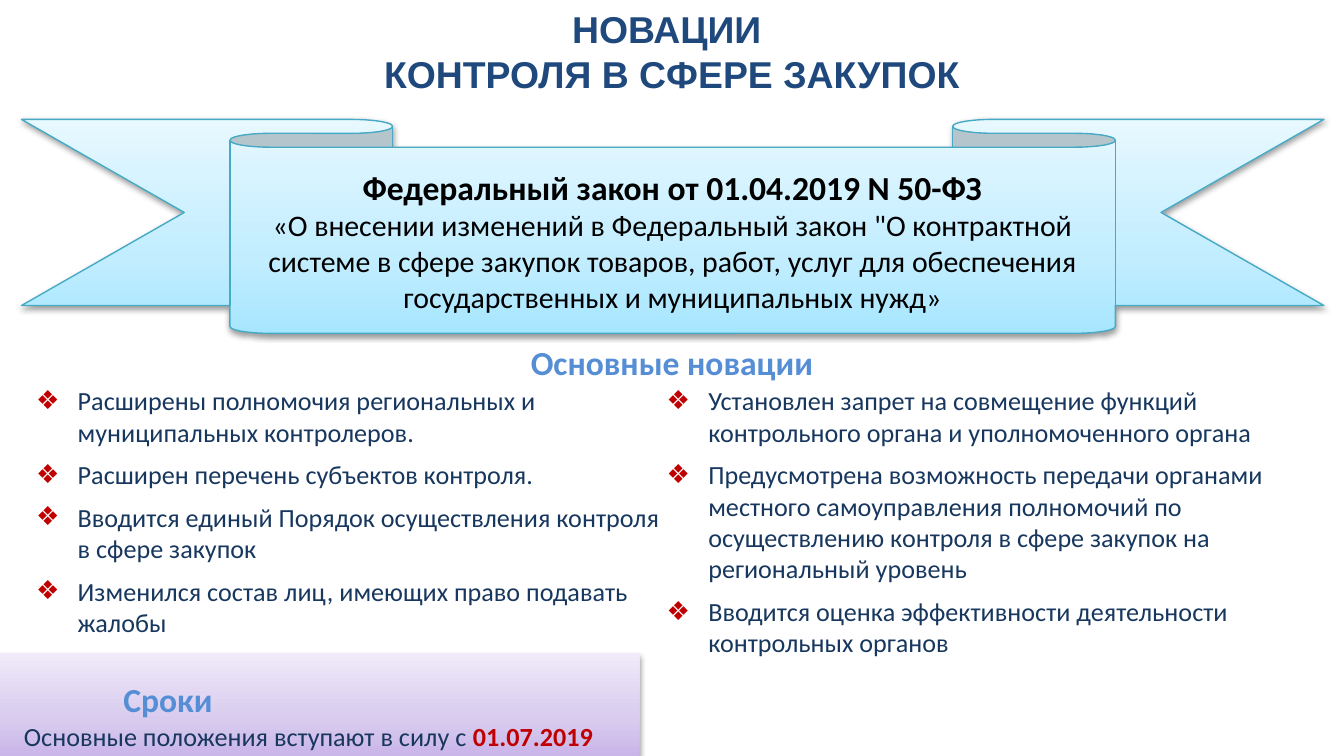
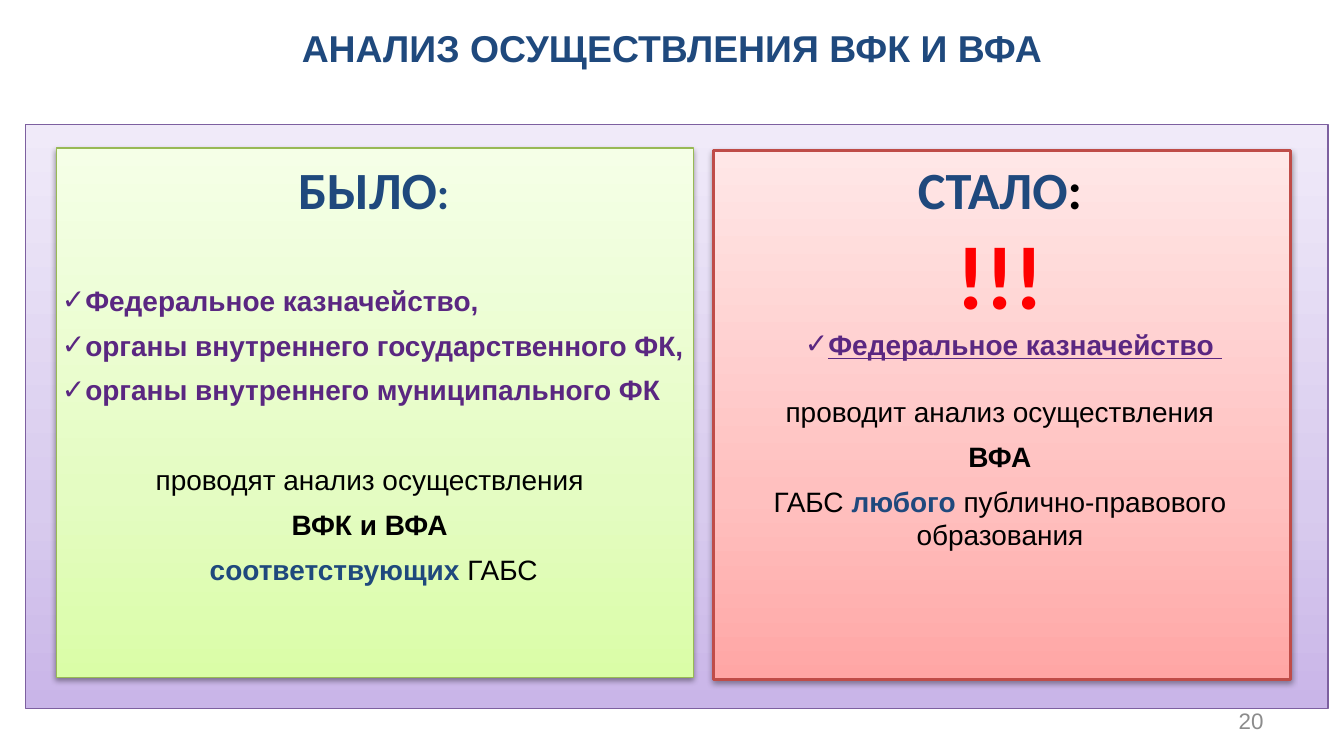
import lxml.etree
import pptx
import pptx.dml.color
import pptx.enum.shapes
import pptx.enum.text
import pptx.oxml
import pptx.oxml.ns
import pptx.util

RGBColor = pptx.dml.color.RGBColor
SHAPES = pptx.enum.shapes.MSO_SHAPE
LEFT = pptx.enum.text.PP_ALIGN.LEFT
CENTER = pptx.enum.text.PP_ALIGN.CENTER
RIGHT = pptx.enum.text.PP_ALIGN.RIGHT
MIDDLE = pptx.enum.text.MSO_ANCHOR.MIDDLE

NAVY = RGBColor(0x1F, 0x49, 0x7D)
DARK_NAVY = RGBColor(0x17, 0x37, 0x5E)
BLUE = RGBColor(0x55, 0x8E, 0xD5)
PURPLE = RGBColor(0x5A, 0x27, 0x81)
DARK_RED = RGBColor(0xC0, 0x00, 0x00)
RED = RGBColor(0xFF, 0x00, 0x00)
BLACK = RGBColor(0x00, 0x00, 0x00)
GRAY = RGBColor(0x8C, 0x8C, 0x8C)
TEAL_LINE = RGBColor(0x46, 0xAA, 0xC5)
PURPLE_LINE = RGBColor(0x7D, 0x60, 0xA0)
GREEN_LINE = RGBColor(0x98, 0xB9, 0x55)
RED_LINE = RGBColor(0xBF, 0x4C, 0x48)

# Gradients run from the bottom edge to the top, with stops at 0, 35 and 100 %
LILAC = (RGBColor(0xC9, 0xB5, 0xE8), RGBColor(0xD8, 0xCB, 0xEE), RGBColor(0xF0, 0xEA, 0xF9))
SKY = (RGBColor(0xA7, 0xE6, 0xFF), RGBColor(0xC1, 0xED, 0xFF), RGBColor(0xE7, 0xF8, 0xFF))
LIME = (RGBColor(0xDA, 0xFD, 0xA7), RGBColor(0xE4, 0xFC, 0xC2), RGBColor(0xF5, 0xFF, 0xE7))
ROSE = (RGBColor(0xFF, 0xA6, 0xA5), RGBColor(0xFF, 0xC0, 0xBF), RGBColor(0xFF, 0xE7, 0xE7))

# Text styles
TITLE = dict(size=20, font="Arial", color=NAVY, bold=True, align=CENTER)
HEADING = dict(size=18, font="Calibri", color=BLUE, bold=True)
BODY = dict(size=14, font="Calibri", color=DARK_NAVY)
CARD_HEADING = dict(size=28, font="Calibri", color=NAVY, bold=True, align=CENTER)
CARD_BODY = dict(size=15, font="Arial", color=BLACK, align=CENTER)
CHECKED = dict(size=15, font="Arial", color=PURPLE, bold=True, bullet="✓")

presentation = pptx.Presentation()
presentation.slide_width = pptx.util.Inches(10)
presentation.slide_height = pptx.util.Inches(5.625)
COLUMN = presentation.slide_width / 100
ROW = presentation.slide_height / 100


def add_frame(slide, left, top, width, height, preset=None, gradient=None,
              line=None, line_width=0.75, shadow=True):
    """Add a shape, or a text box without a preset, on a grid of 100 columns and rows."""
    place = [int(left * COLUMN), int(top * ROW), int(width * COLUMN), int(height * ROW)]
    if preset is None:
        shape = slide.shapes.add_textbox(*place)
        shape.text_frame.word_wrap = True
        return shape
    shape = slide.shapes.add_shape(preset, *place)
    shape.shadow.inherit = False
    shape.fill.gradient()
    stops = "".join(f'<a:gs pos="{position}"><a:srgbClr val="{color}"/></a:gs>'
                    for position, color in zip((0, 35000, 100000), gradient))
    namespace = pptx.oxml.ns.nsdecls("a")
    properties = shape.fill._xPr
    properties.replace(properties.find(pptx.oxml.ns.qn("a:gradFill")), pptx.oxml.parse_xml(
        f'<a:gradFill {namespace} rotWithShape="1"><a:gsLst>{stops}</a:gsLst>'
        '<a:lin ang="16200000" scaled="0"/></a:gradFill>'))
    if line is None:
        shape.line.fill.background()
    else:
        shape.line.color.rgb = line
        shape.line.width = pptx.util.Pt(line_width)
    if shadow:
        effects = properties.find(pptx.oxml.ns.qn("a:effectLst"))
        effects.append(pptx.oxml.parse_xml(
            f'<a:outerShdw {namespace} blurRad="39400" dist="20300" dir="5400000" '
            'rotWithShape="0"><a:srgbClr val="000000"><a:alpha val="38000"/></a:srgbClr>'
            '</a:outerShdw>'))
    return shape


def write(shape, text, align=LEFT, before=0, after=0, bullet=None, bullet_color=None,
          margin=0, indent=0, **style):
    """Write one paragraph; text is a string or a list of (string, style changes)."""
    frame = shape.text_frame
    paragraph = frame.paragraphs[0]
    if paragraph.runs:
        paragraph = frame.add_paragraph()
    paragraph.alignment = align
    paragraph.space_before = pptx.util.Pt(before)
    paragraph.space_after = pptx.util.Pt(after)
    if bullet:
        properties = paragraph._p.get_or_add_pPr()
        properties.set("marL", str(pptx.util.Inches(margin)))
        properties.set("indent", str(pptx.util.Inches(indent)))
        qn = pptx.oxml.ns.qn
        if bullet_color is not None:
            color = lxml.etree.SubElement(properties, qn("a:buClr"))
            lxml.etree.SubElement(color, qn("a:srgbClr")).set("val", str(bullet_color))
        lxml.etree.SubElement(properties, qn("a:buFont")).set("typeface", "Arial")
        lxml.etree.SubElement(properties, qn("a:buChar")).set("char", bullet)
    for words, changes in [(text, {})] if isinstance(text, str) else text:
        look = {**style, **changes}
        run = paragraph.add_run()
        run.text = words
        run.font.size = pptx.util.Pt(look["size"])
        run.font.name = look["font"]
        run.font.color.rgb = look["color"]
        run.font.bold = look.get("bold", False)
        run.font.underline = look.get("underline", False)


# Slide 1: what is new in procurement control
slide = presentation.slides.add_slide(presentation.slide_layouts[6])
add_frame(slide, 0, 86.4, 47.6, 13.6, SHAPES.RECTANGLE, LILAC)

# Ribbon with the name of the law
ribbon = add_frame(slide, 1.6, 15.8, 96.9, 28.3, SHAPES.DOWN_RIBBON, SKY, TEAL_LINE)
ribbon.adjustments[0] = 0.13
ribbon.adjustments[1] = 0.68
ribbon.text_frame.word_wrap = True
ribbon.text_frame.vertical_anchor = MIDDLE
write(ribbon, "Федеральный закон от 01.04.2019 N 50-ФЗ",
      size=18, font="Calibri", color=BLACK, bold=True, align=CENTER)
write(ribbon, "«О внесении изменений в Федеральный закон \"О контрактной системе в сфере "
      "закупок товаров, работ, услуг для обеспечения государственных и муниципальных нужд»",
      size=16, font="Calibri", color=BLACK, align=CENTER)

title = add_frame(slide, 5.7, 0, 88.6, 13.7)
write(title, "НОВАЦИИ ", **TITLE)
write(title, "КОНТРОЛЯ В СФЕРЕ ЗАКУПОК", **TITLE)

# List of changes in two columns
changes_list = add_frame(slide, 1.7, 50, 95.8, 38.2)
changes_list.text_frame._txBody.bodyPr.set("numCol", "2")
for number, change in enumerate([
    "Расширены полномочия региональных и муниципальных контролеров.",
    "Расширен перечень субъектов контроля.",
    "Вводится единый Порядок осуществления контроля в сфере закупок",
    "Изменился состав лиц, имеющих право подавать жалобы",
    "Установлен запрет на совмещение функций контрольного органа и уполномоченного органа",
    "Предусмотрена возможность передачи органами местного самоуправления полномочий "
    "по осуществлению контроля в сфере закупок на региональный уровень",
    "Вводится оценка эффективности деятельности контрольных органов",
]):
    write(changes_list, change, before=6 if number else 0, bullet="❖",
          bullet_color=DARK_RED, margin=0.31, indent=-0.31, **BODY)
write(add_frame(slide, 33.1, 44.4, 33.8, 7.1), "Основные новации", align=CENTER, **HEADING)

# Dates
write(add_frame(slide, 0.8, 94.4, 47.6, 5.6),
      [("Основные положения вступают в силу с ", {}),
       ("01.07.2019", dict(color=DARK_RED, bold=True))], **BODY)
write(add_frame(slide, 8.2, 88.9, 38.3, 7.1), "Сроки", **HEADING)

# Slide 2: before and after
slide = presentation.slides.add_slide(presentation.slide_layouts[6])
page_number = add_frame(slide, 71.7, 92.6, 23.3, 5.3)
page_number.text_frame.vertical_anchor = MIDDLE
write(page_number, "20", size=12, font="Arial", color=GRAY, align=RIGHT)
write(add_frame(slide, 0, 2.5, 100, 7.8), "АНАЛИЗ ОСУЩЕСТВЛЕНИЯ ВФК И ВФА", **TITLE)

# Backdrop and the two cards
add_frame(slide, 1.9, 16.5, 96.9, 77.2, SHAPES.RECTANGLE, LILAC, PURPLE_LINE, shadow=False)
add_frame(slide, 4.2, 19.6, 47.4, 70, SHAPES.RECTANGLE, LIME, GREEN_LINE)
add_frame(slide, 53.1, 19.9, 42.9, 70, SHAPES.RECTANGLE, ROSE, RED_LINE, 1.5)
before_text = add_frame(slide, 4.3, 19.9, 48, 59)
after_text = add_frame(slide, 53.1, 19.9, 43.6, 54.4)
for card_text in (before_text, after_text):
    card_text.text_frame.margin_left = 0

# Text of the card "before"
write(before_text, [("БЫЛО", {}), (":", dict(size=24))], after=6, **CARD_HEADING)
for number, body in enumerate(["Федеральное казначейство,",
                               "органы внутреннего государственного ФК,",
                               "органы внутреннего муниципального ФК"]):
    write(before_text, body, before=0 if number else 28, after=6,
          margin=0.19, indent=-0.16, **CHECKED)
write(before_text, "проводят анализ осуществления ", before=24, after=6, **CARD_BODY)
write(before_text, "ВФК и ВФА ", after=6, bold=True, **CARD_BODY)
write(before_text, [("соответствующих", dict(color=NAVY, bold=True)), (" ГАБС", {})],
      after=6, **CARD_BODY)

# Text of the card "after"
write(after_text, [("СТАЛО", {}), (":", dict(color=BLACK))], **CARD_HEADING)
write(after_text, "!!!", **{**CARD_HEADING, "size": 48, "color": RED})
write(after_text, "Федеральное казначейство ", align=CENTER, indent=0.2,
      underline=True, **CHECKED)
write(after_text, "проводит анализ осуществления", before=18, after=6, **CARD_BODY)
write(after_text, "ВФА", after=6, bold=True, **CARD_BODY)
write(after_text, [("ГАБС ", {}), ("любого ", dict(color=NAVY, bold=True)),
                   ("публично-правового образования", {})], **CARD_BODY)

presentation.save("out.pptx")
